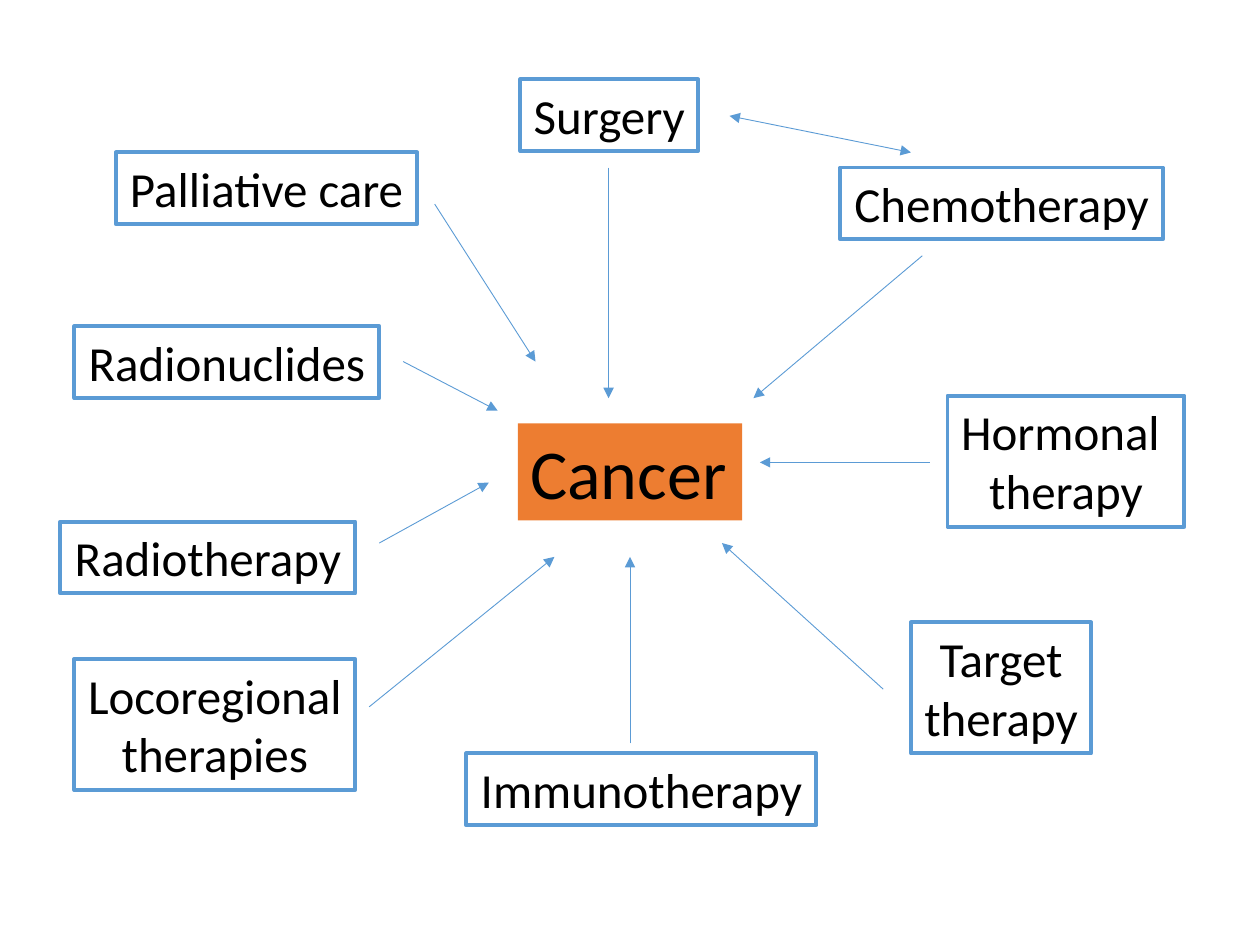
from dataclasses import dataclass

from lxml import etree
from pptx import Presentation
from pptx.dml.color import RGBColor
from pptx.enum.shapes import MSO_CONNECTOR
from pptx.enum.text import MSO_AUTO_SIZE, PP_ALIGN
from pptx.oxml.ns import qn
from pptx.slide import Slide
from pptx.util import Inches, Length, Pt

STRAIGHT = MSO_CONNECTOR.STRAIGHT
GROW = MSO_AUTO_SIZE.SHAPE_TO_FIT_TEXT
CENTER, LEFT = PP_ALIGN.CENTER, PP_ALIGN.LEFT
BLANK_LAYOUT = 6

FONT = "Calibri"
BLUE, ORANGE, BLACK = "5B9BD5", "ED7D31", "000000"

# The slide is a grid of 100 columns and 75 rows
COLUMNS, ROWS = 100, 75
CELL = Inches(0.1)
ONE_LINE, TWO_LINES = 5.7, 10.4  # treatment box heights in rows


@dataclass
class Treatment:
    text: str
    column: float
    row: float
    width: float


@dataclass
class Arrow:
    start: tuple[float, float]
    end: tuple[float, float]
    two_way: bool = False


TREATMENTS = [
    Treatment("Surgery", 41.3, 6.3, 14.1),
    Treatment("Chemotherapy", 66.7, 13.3, 25.6),
    Treatment("Hormonal \ntherapy", 75.2, 31.4, 18.8),
    Treatment("Target\ntherapy", 72.3, 49.4, 14.3),
    Treatment("Immunotherapy", 37, 59.8, 27.8),
    Treatment("Locoregional\ntherapies", 5.9, 52.3, 22.3),
    Treatment("Radiotherapy", 4.8, 41.4, 23.4),
    Treatment("Radionuclides", 5.9, 25.9, 24.2),
    Treatment("Palliative care", 9.2, 12.1, 23.9),
]

# From each treatment to the centre, then between surgery and chemotherapy
ARROWS = [
    Arrow((48.3, 13.3), (48.3, 31.6)),
    Arrow((73.2, 20.3), (59.8, 31.6)),
    Arrow((73.8, 36.7), (60.3, 36.7)),
    Arrow((70.1, 54.7), (57.3, 43.1)),
    Arrow((50, 59), (50, 44.2)),
    Arrow((29.3, 56.1), (44, 44.2)),
    Arrow((30.1, 43.1), (38.8, 38.3)),
    Arrow((32, 28.7), (39.5, 32.6)),
    Arrow((34.5, 16.2), (42.5, 28.7)),
    Arrow((57.9, 9.2), (72.3, 12.1), two_way=True),
]


def color(value: str) -> RGBColor:
    return RGBColor.from_string(value)


def cells(*counts: float) -> list[Length]:
    return [Length(round(count * CELL)) for count in counts]


def add_box(slide: Slide, text: str, area: tuple[float, float, float, float],
            size: int, alignment: PP_ALIGN, fill: str | None = None,
            line: str | None = None) -> None:
    box = slide.shapes.add_textbox(*cells(*area))
    if fill:
        box.fill.solid()
        box.fill.fore_color.rgb = color(fill)
    if line:
        box.line.color.rgb = color(line)
        box.line.width = Pt(2.25)
    frame = box.text_frame
    frame.text = text
    frame.word_wrap = False
    frame.auto_size = GROW
    for paragraph in frame.paragraphs:
        paragraph.alignment = alignment
        for run in paragraph.runs:
            run.font.name = FONT
            run.font.size = Pt(size)
            run.font.color.rgb = color(BLACK)


def add_treatment(slide: Slide, treatment: Treatment) -> None:
    height = TWO_LINES if "\n" in treatment.text else ONE_LINE
    area = (treatment.column, treatment.row, treatment.width, height)
    add_box(slide, treatment.text, area, 28, CENTER, line=BLUE)


def add_arrow(slide: Slide, arrow: Arrow) -> None:
    connector = slide.shapes.add_connector(STRAIGHT, *cells(*arrow.start, *arrow.end))
    connector.line.color.rgb = color(BLUE)
    connector.line.width = Pt(0.5)
    properties = connector._element.spPr
    outline = properties.find(qn("a:ln"))
    for end in ("a:headEnd", "a:tailEnd") if arrow.two_way else ("a:tailEnd",):
        etree.SubElement(outline, qn(end), type="triangle")
    etree.SubElement(properties, qn("a:effectLst"))


def main() -> None:
    presentation = Presentation()
    presentation.slide_width, presentation.slide_height = cells(COLUMNS, ROWS)
    slide = presentation.slides.add_slide(presentation.slide_layouts[BLANK_LAYOUT])

    # Disease in the centre, treatments around it
    add_box(slide, "Cancer", (41.1, 33.6, 17.8, 7.7), 40, LEFT, fill=ORANGE)
    for treatment in TREATMENTS:
        add_treatment(slide, treatment)
    for arrow in ARROWS:
        add_arrow(slide, arrow)

    presentation.save("out.pptx")


if __name__ == "__main__":
    main()
